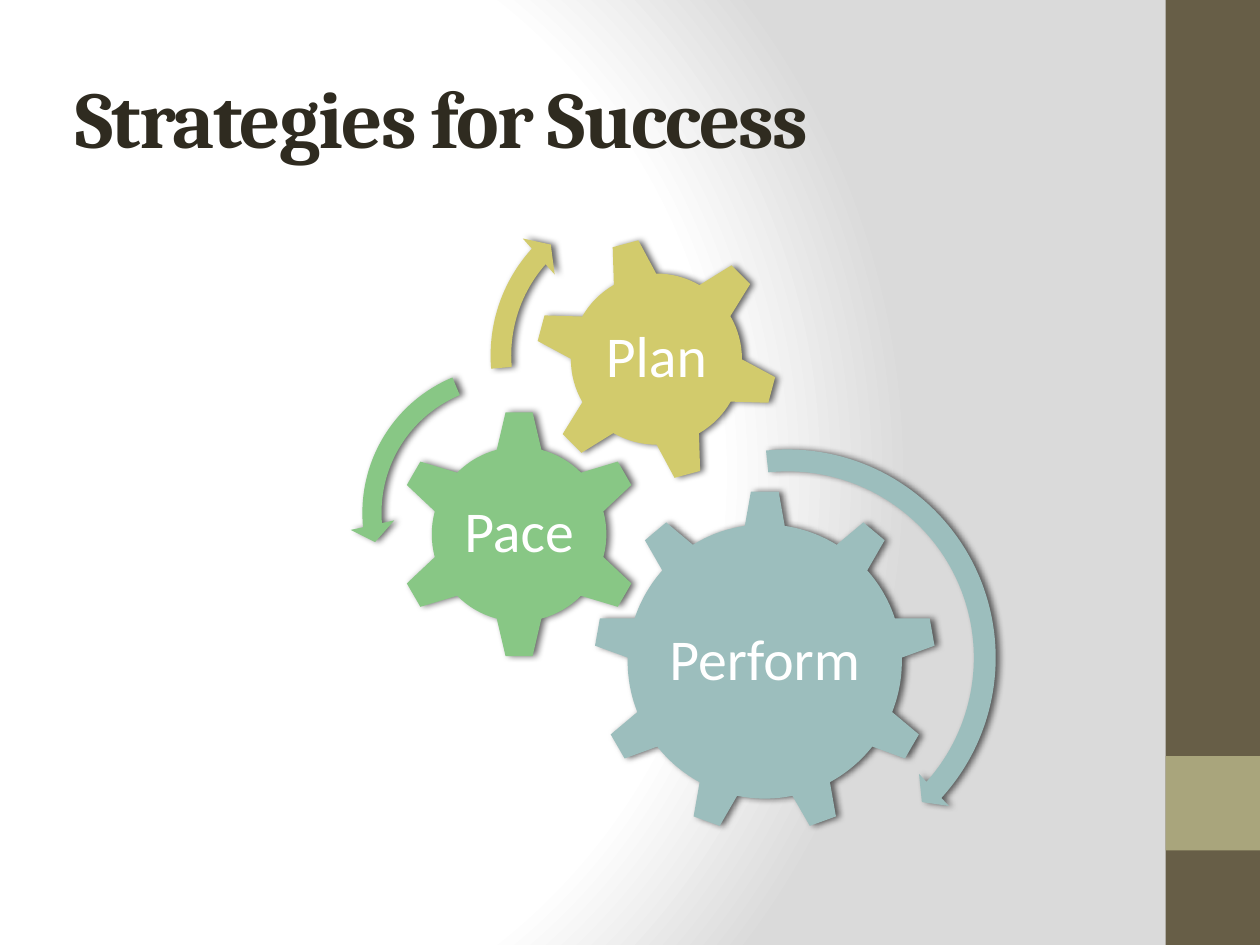
from lxml import etree
from pptx import Presentation, util as u
from pptx.dml.color import RGBColor
from pptx.enum import shapes, text
from pptx.oxml import parse_xml
from pptx.oxml.ns import nsdecls, qn

COLORS = {"white": "FFFFFF", "grey": "DADADA", "brown": "675E47", "olive": "A9A57C",
          "ink": "2F2B20", "blue": "9CBEBD", "green": "88C785", "yellow": "D2CB6C",
          "black": "000000"}
COLUMNS, ROWS = 100, 75  # square grid cells
SHAPE = shapes.MSO_SHAPE
CENTER = text.PP_ALIGN.CENTER
TITLE_FONT = {"name": "Cambria", "size": u.Pt(46), "bold": True}
LABEL_FONT = {"name": "Calibri", "size": u.Pt(33)}


class Deck:
    """Holds the style and the current slide."""

    def __init__(self):
        self.presentation = Presentation()
        self.presentation.slide_width = u.Inches(10)
        self.presentation.slide_height = u.Inches(7.5)
        self.cell = self.presentation.slide_width / COLUMNS
        self.slide = self.presentation.slides.add_slide(self.presentation.slide_layouts[5])
        self.parent = self.slide.shapes

    def box(self, *cells):
        return [round(value * self.cell) for value in cells]

    def centered(self, x, y, width, height):
        return x - width / 2, y - height / 2, width, height

    def background(self):
        stops = "".join(f'<a:gs pos="{share * 1000}"><a:srgbClr val="{COLORS[color]}"/></a:gs>'
                        for share, color in ((0, "white"), (75, "white"), (100, "grey")))
        common = self.slide._element.cSld
        common.insert(0, parse_xml(
            f'<p:bg {nsdecls("p", "a")}><p:bgPr><a:gradFill rotWithShape="1">'
            f'<a:gsLst>{stops}</a:gsLst><a:path path="circle">'
            '<a:fillToRect l="20000" t="50000" r="100000" b="50000"/></a:path>'
            '</a:gradFill><a:effectLst/></p:bgPr></p:bg>'))

    def fill_text(self, frame, words, font, color, margin, **paragraph_format):
        frame.word_wrap = True
        frame.vertical_anchor = text.MSO_ANCHOR.MIDDLE
        for side in ("left", "right", "top", "bottom"):
            setattr(frame, f"margin_{side}", u.Inches(margin))
        paragraph = frame.paragraphs[0]
        for name, value in paragraph_format.items():
            setattr(paragraph, name, value)
        run = paragraph.add_run()
        run.text = words
        for name, value in font.items():
            setattr(run.font, name, value)
        run.font.color.rgb = RGBColor.from_string(COLORS[color])
        return run

    def title(self, words, *cells):
        title = self.slide.shapes.title
        title.left, title.top, title.width, title.height = self.box(*cells)
        run = self.fill_text(title.text_frame, words, TITLE_FONT, "ink", 0.1,
                             alignment=text.PP_ALIGN.LEFT)
        run._r.get_or_add_rPr().set("spc", "-100")

    def shape(self, kind, color, cells, shadow=False, rotation=0, adjustments=()):
        shape = self.parent.add_shape(kind, *self.box(*cells))
        shape.rotation = rotation
        for index, value in enumerate(adjustments):
            shape.adjustments[index] = value
        shape.fill.solid()
        shape.fill.fore_color.rgb = RGBColor.from_string(COLORS[color])
        shape.line.fill.background()
        shape.shadow.inherit = False
        if shadow:
            effects = shape._element.spPr.find(qn("a:effectLst"))
            outer = etree.SubElement(effects, qn("a:outerShdw"), blurRad=str(u.Pt(4)),
                                     dist=str(u.Pt(2)), dir="0", rotWithShape="0")
            tint = etree.SubElement(outer, qn("a:srgbClr"), val=COLORS["black"])
            etree.SubElement(tint, qn("a:alpha"), val="60000")

    def label(self, words, cells):
        label = self.parent.add_textbox(*self.box(*cells))
        self.fill_text(label.text_frame, words, LABEL_FONT, "white", 0.05,
                       alignment=CENTER, line_spacing=0.9)


# label, color, gear kind, gear center, gear size, rotation, label size
GEARS = [
    ("Perform", "blue", SHAPE.GEAR_9, (60.7, 52.5), 27.2, 0, (16.3, 14)),
    ("Pace", "green", SHAPE.GEAR_6, (41.2, 42.4), 19.8, 0, (9.8, 9.8)),
    ("Plan", "yellow", SHAPE.GEAR_6, (52.1, 28.5), 19.4, 345, (10.9, 10.9)),
]
# color, arrow kind, center, size, thickness and angles
ARROWS = [
    ("blue", SHAPE.CIRCULAR_ARROW, (62.5, 52.2), 34.8, (0.05, 2.99, 25.24, 158.46, 0.05)),
    ("green", SHAPE.LEFT_CIRCULAR_ARROW, (40.4, 40.7), 25.3, (0.06, 4.3, 104.89, 148.38, 0.07)),
    ("yellow", SHAPE.CIRCULAR_ARROW, (51.5, 28.2), 27.3, (0.06, 3.94, 133.14, 105.08, 0.07)),
]


def main():
    deck = Deck()
    deck.background()

    # Side band with accent square
    deck.shape(SHAPE.RECTANGLE, "brown", (92.5, 0, 7.5, ROWS))
    deck.shape(SHAPE.RECTANGLE, "olive", (92.5, 60, 7.5, 7.5))

    deck.title("Strategies for Success", 5, 3, 83.3, 12.5)

    # Gear diagram
    deck.parent = deck.slide.shapes.add_group_shape().shapes
    for words, color, kind, center, size, rotation, label_size in GEARS:
        deck.shape(kind, color, deck.centered(*center, size, size), True, rotation)
        deck.label(words, deck.centered(*center, *label_size))

    # Turning arrows
    for color, kind, center, size, adjustments in ARROWS:
        deck.shape(kind, color, deck.centered(*center, size, size), True,
                   adjustments=adjustments)

    deck.presentation.save("out.pptx")


if __name__ == "__main__":
    main()
